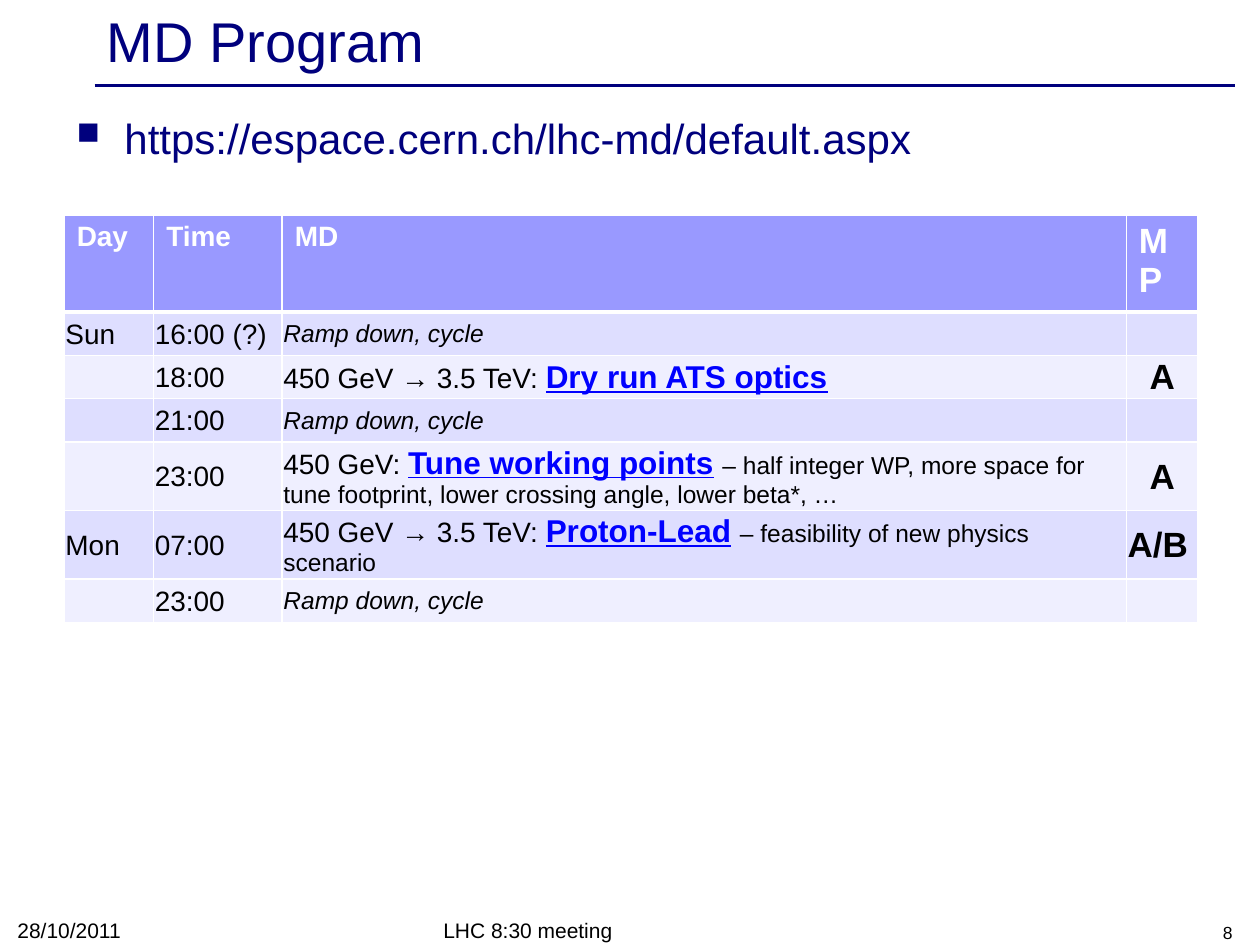
"""Build the MD Program slide: a title, a link and the schedule table."""
from lxml import etree
from pptx import Presentation
from pptx.dml.color import RGBColor
from pptx.enum.shapes import MSO_CONNECTOR
from pptx.enum.text import MSO_ANCHOR, PP_ALIGN
from pptx.oxml import parse_xml
from pptx.oxml.ns import nsdecls, qn
from pptx.util import Inches, Pt

LEFT, CENTER, RIGHT = PP_ALIGN.LEFT, PP_ALIGN.CENTER, PP_ALIGN.RIGHT
TOP, MIDDLE, BOTTOM = MSO_ANCHOR.TOP, MSO_ANCHOR.MIDDLE, MSO_ANCHOR.BOTTOM
STRAIGHT = MSO_CONNECTOR.STRAIGHT

NAVY = RGBColor(0x00, 0x00, 0x7D)
BLACK = RGBColor(0x00, 0x00, 0x00)
WHITE = RGBColor(0xFF, 0xFF, 0xFF)
LINK = RGBColor(0x00, 0x00, 0xFF)
HEADER = RGBColor(0x99, 0x99, 0xFF)
BANDS = RGBColor(0xDE, 0xDE, 0xFF), RGBColor(0xEF, 0xEF, 0xFF)

FONT = "Arial"
COLUMNS = 0.71, 1.02, 6.7, 0.57
ROWS = 0.72, 0.32, 0.33, 0.32, 0.51, 0.51, 0.32
HEADINGS = ("Day", 16), ("Time", 16), ("MD", 16), ("MP", 20)
PAUSE = ("", "Ramp down, cycle", "")
SCHEDULE = [
    ("Sun", "16:00 (?)", PAUSE, ""),
    ("", "18:00", ("450 GeV → 3.5 TeV: ", "Dry run ATS optics", ""), "A"),
    ("", "21:00", PAUSE, ""),
    ("", "23:00", ("450 GeV: ", "Tune working points",
                   "– half integer WP, more space for tune footprint, "
                   "lower crossing angle, lower beta*, …"), "A"),
    ("Mon", "07:00", ("450 GeV → 3.5 TeV: ", "Proton-Lead",
                      "– feasibility of new physics scenario"), "A/B"),
    ("", "23:00", PAUSE, ""),
]


def set_font(font, size, color=BLACK, bold=False, italic=False, underline=False):
    """Set all the properties of a font."""
    font.name, font.size, font.color.rgb = FONT, Pt(size), color
    font.bold, font.italic, font.underline = bold, italic, underline


def add_text(s, box, text, size, color=BLACK, align=LEFT, anchor=BOTTOM):
    """Add a one-paragraph text box and return its paragraph."""
    tf = s.shapes.add_textbox(*map(Inches, box)).text_frame
    tf.word_wrap, tf.vertical_anchor = True, anchor
    p = tf.paragraphs[0]
    p.text, p.alignment = text, align
    set_font(p.font, size, color)
    return p


def add_link_bullet(s):
    """Add the bulleted web address."""
    p = add_text(s, (0.51, 0.84, 9, 1.1), "", 24, NAVY, anchor=TOP)
    p.text = "https://espace.cern.ch/lhc-md/default.aspx"
    pPr = p._p.get_or_add_pPr()
    pPr.set("marL", str(Inches(0.38)))
    pPr.set("indent", str(-Inches(0.38)))
    bullet = (f'<a:buClr {nsdecls("a")}><a:srgbClr val="{NAVY}"/></a:buClr>',
              f'<a:buSzPct {nsdecls("a")} val="75000"/>',
              f'<a:buChar {nsdecls("a")} char="■"/>')
    for i, xml in enumerate(bullet):
        pPr.insert(i, parse_xml(xml))


def add_rule(s):
    """Add the line below the title."""
    line = s.shapes.add_connector(STRAIGHT, *map(Inches, (0.75, 0.68, 9.8, 0.68)))
    line.line.color.rgb, line.line.width = NAVY, Pt(2)
    etree.SubElement(line._element.spPr, qn("a:effectLst"))


def style_cell(cell, fill, thick=()):
    """Give a cell white borders and a fill; the sides in thick get 3 points."""
    tcPr = cell._tc.get_or_add_tcPr()
    for side in "LRTB":
        width = Pt(3 if side in thick else 1)
        tcPr.append(parse_xml(
            f'<a:ln{side} {nsdecls("a")} w="{width}"><a:solidFill>'
            f'<a:srgbClr val="{WHITE}"/></a:solidFill></a:ln{side}>'))
    cell.fill.solid()
    cell.fill.fore_color.rgb = fill


def fill_cell(cell, text, size, color=BLACK, bold=False, italic=False, align=LEFT):
    """Write one uniform paragraph in a cell."""
    p = cell.text_frame.paragraphs[0]
    p.text, p.alignment = text, align
    set_font(p.font, size, color, bold, italic)


def fill_study(cell, beam, name, note):
    """Write a beam energy, an underlined study name and a note."""
    p = cell.text_frame.paragraphs[0]
    styles = [(beam, 16, BLACK, False, False), (name, 18, LINK, True, True)]
    if note:
        styles += [(" ", 18, LINK, True, False), (note, 14, BLACK, False, False)]
    for text, size, color, bold, underline in styles:
        r = p.add_run()
        r.text = text
        set_font(r.font, size, color, bold, underline=underline)


def add_schedule(s):
    """Add the schedule table."""
    shape = s.shapes.add_table(len(ROWS), len(COLUMNS), Inches(0.51), Inches(1.71),
                               Inches(sum(COLUMNS)), Inches(sum(ROWS)))
    table = shape.table
    for column, width in zip(table.columns, COLUMNS):
        column.width = Inches(width)
    for row, height in zip(table.rows, ROWS):
        row.height = Inches(height)
    for cell, (text, size) in zip(table.rows[0].cells, HEADINGS):
        style_cell(cell, HEADER, thick="B")
        fill_cell(cell, text, size, WHITE, bold=True)
    for i, (day, time, study, mp) in enumerate(SCHEDULE):
        cells = list(table.rows[i + 1].cells)
        for cell in cells:
            style_cell(cell, BANDS[i % 2], thick="" if i else "T")
            cell.vertical_anchor = MIDDLE
            cell.margin_left = cell.margin_right = cell.margin_top = Inches(0.01)
            cell.margin_bottom = 0
        fill_cell(cells[0], day, 16)
        fill_cell(cells[1], time, 16)
        if study is PAUSE:
            fill_cell(cells[2], study[1], 14, italic=True)
        else:
            fill_study(cells[2], *study)
        fill_cell(cells[3], mp, 20, bold=True, align=CENTER if mp == "A" else LEFT)


def main():
    """Build and save the slide."""
    prs = Presentation()
    prs.slide_width, prs.slide_height = Inches(10), Inches(7.5)
    s = prs.slides.add_slide(prs.slide_layouts[6])
    add_rule(s)
    add_text(s, (0.75, 0.03, 9, 0.57), "MD Program", 32, NAVY, anchor=MIDDLE)
    add_link_bullet(s)
    add_schedule(s)
    add_text(s, (0.04, 7.25, 2.33, 0.28), "28/10/2011", 12)
    add_text(s, (3.42, 7.25, 3.17, 0.28), "LHC 8:30 meeting", 12)
    add_text(s, (7.55, 7.25, 2.33, 0.28), "8", 10, align=RIGHT)
    prs.save("out.pptx")


if __name__ == "__main__":
    main()
